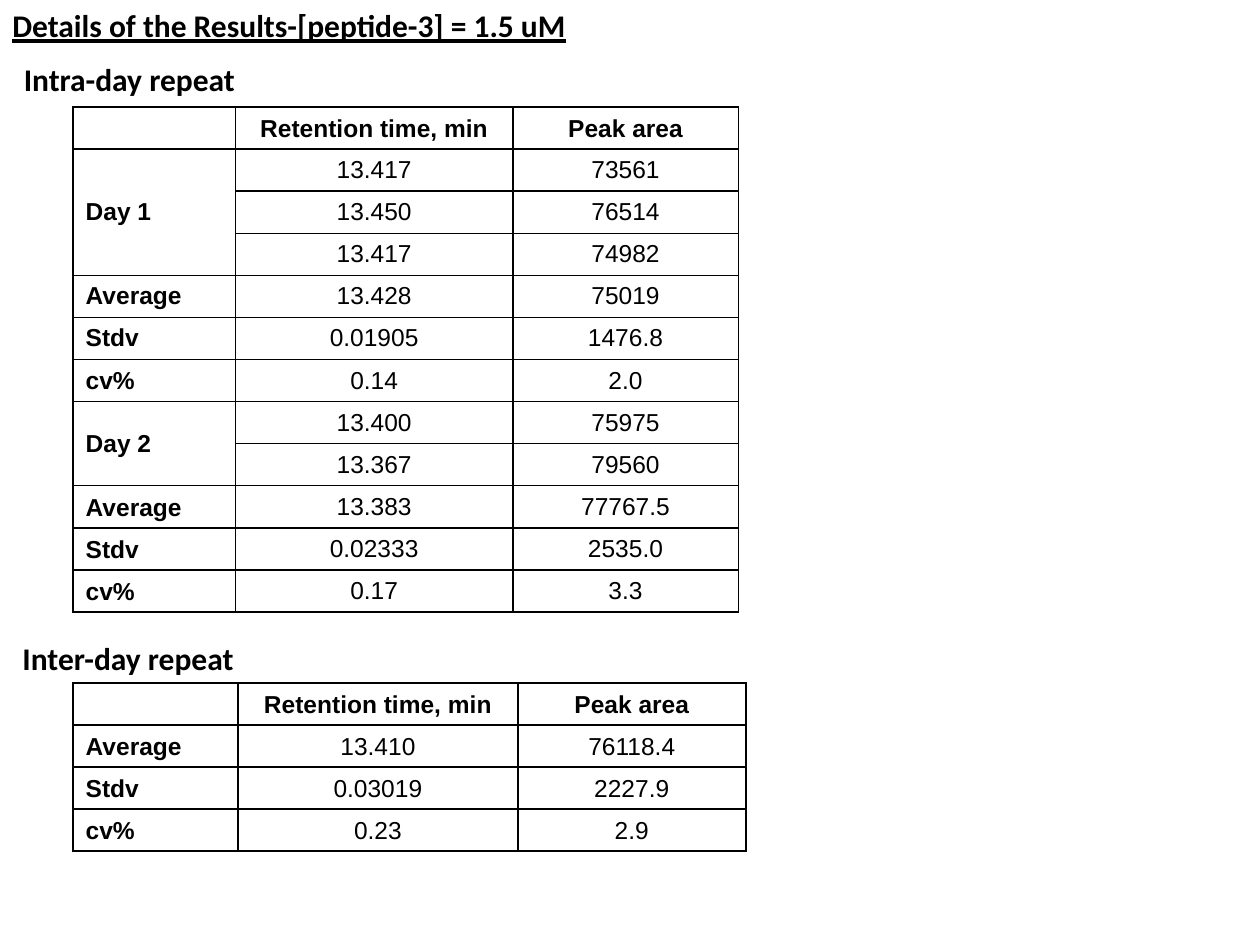
from pptx import Presentation
from pptx.dml.color import RGBColor
from pptx.enum.text import MSO_ANCHOR as ANCHOR, MSO_AUTO_SIZE as AUTO, PP_ALIGN as ALIGN
from pptx.oxml import parse_xml
from pptx.oxml.ns import nsdecls
from pptx.util import Inches, Pt


def color(value):
    return RGBColor.from_string(value)


def add_run(p, text, fmt):
    r = p.add_run()
    r.text = text
    for name, value in fmt.items():
        setattr(r.font, name, value)
    r.font.color.rgb = color("000000")


prs = Presentation()
prs.slide_width, prs.slide_height = Inches(10), Inches(7.5)
s = prs.slides.add_slide(prs.slide_layouts[6])

heading = {"name": "Calibri", "size": Pt(18), "bold": True}
body = {"name": "Arial", "size": Pt(14)}

for text, x, y, w, underline in [
    ("Details of the Results-[peptide-3] = 1.5 uM", 0, 0, 4.64, True),
    ("Intra-day repeat", 0.09, 0.43, 2.08, False),
    ("Inter-day repeat", 0.08, 5.02, 2.08, False),
]:
    tf = s.shapes.add_textbox(Inches(x), Inches(y), Inches(w), Inches(0.4)).text_frame
    tf.word_wrap = False
    tf.auto_size = AUTO.SHAPE_TO_FIT_TEXT
    add_run(tf.paragraphs[0], text, {**heading, "underline": underline})

header = ("", "Retention time, min", "Peak area")
intra = [
    header,
    ("Day 1", "13.417", "73561"),
    ("", "13.450", "76514"),
    ("", "13.417", "74982"),
    ("Average", "13.428", "75019"),
    ("Stdv", "0.01905", "1476.8"),
    ("cv%", "0.14", "2.0"),
    ("Day 2", "13.400", "75975"),
    ("", "13.367", "79560"),
    ("Average", "13.383", "77767.5"),
    ("Stdv", "0.02333", "2535.0"),
    ("cv%", "0.17", "3.3"),
]
inter = [
    header,
    ("Average", "13.410", "76118.4"),
    ("Stdv", "0.03019", "2227.9"),
    ("cv%", "0.23", "2.9"),
]

for rows, y, height, widths, merges, middle_rows, label_middle_rows in [
    (intra, 0.85, 4, (1.29, 2.2, 1.79), [(1, 3), (7, 8)], range(1, 12), range(1, 9)),
    (inter, 5.42, 1.33, (1.31, 2.22, 1.81), [], (), ()),
]:
    frame = s.shapes.add_table(
        len(rows), 3, Inches(0.58), Inches(y), Inches(sum(widths)), Inches(height))
    table = frame.table
    table.first_row = table.horz_banding = False
    for column, width in zip(table.columns, widths):
        column.width = Inches(width)
    for i, row in enumerate(rows):
        for j, text in enumerate(row):
            cell = table.cell(i, j)
            centered = i in (middle_rows if j else label_middle_rows)
            cell.vertical_anchor = ANCHOR.MIDDLE if centered else ANCHOR.BOTTOM
            tcPr = cell._tc.get_or_add_tcPr()
            for side in ("L", "R", "T", "B"):
                tcPr.append(parse_xml(
                    f'<a:ln{side} {nsdecls("a")} w="12700"><a:solidFill>'
                    f'<a:srgbClr val="000000"/></a:solidFill></a:ln{side}>'))
            cell.fill.solid()
            cell.fill.fore_color.rgb = color("FFFFFF")
            p = cell.text_frame.paragraphs[0]
            p.alignment = ALIGN.CENTER if j else ALIGN.LEFT
            if text:
                add_run(p, text, {**body, "bold": i == 0 or j == 0})
            else:
                p._p.append(parse_xml(f'<a:endParaRPr {nsdecls("a")} sz="1400"/>'))
    for first, last in merges:
        table.cell(first, 0).merge(table.cell(last, 0))

prs.save("out.pptx")
